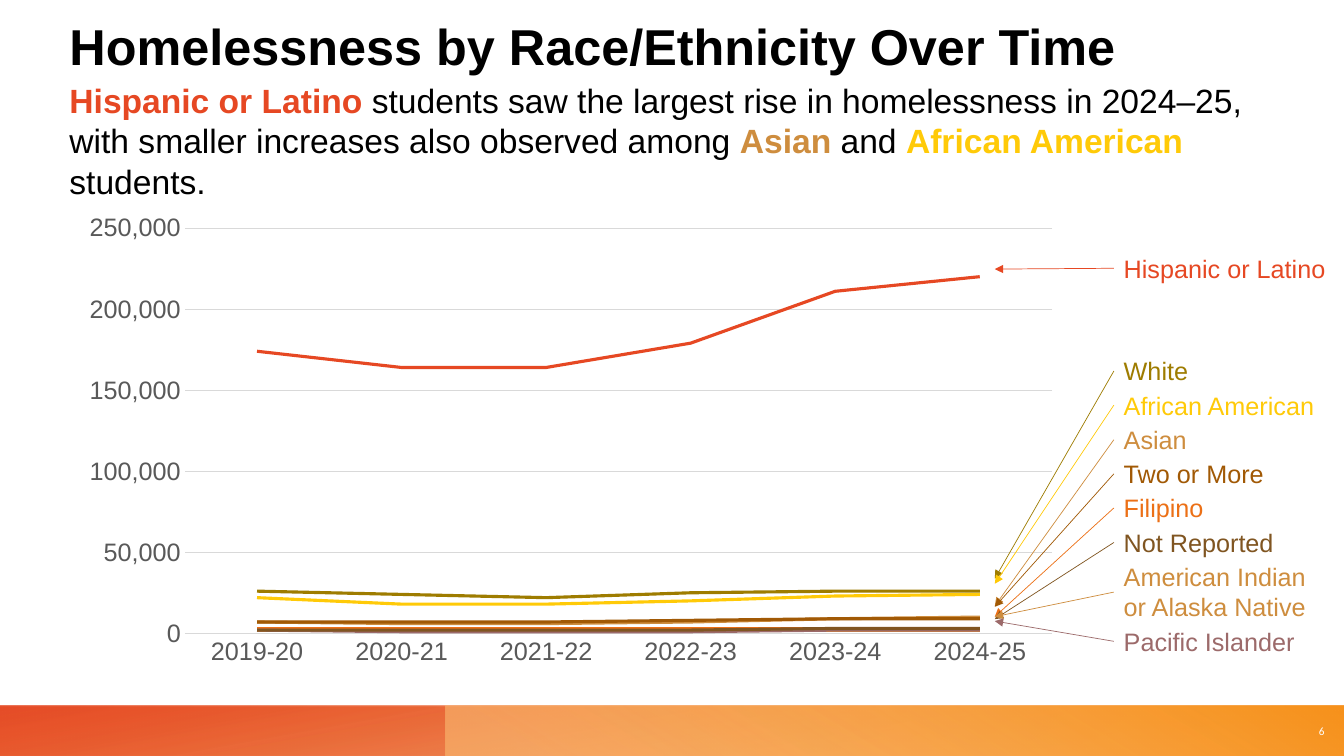
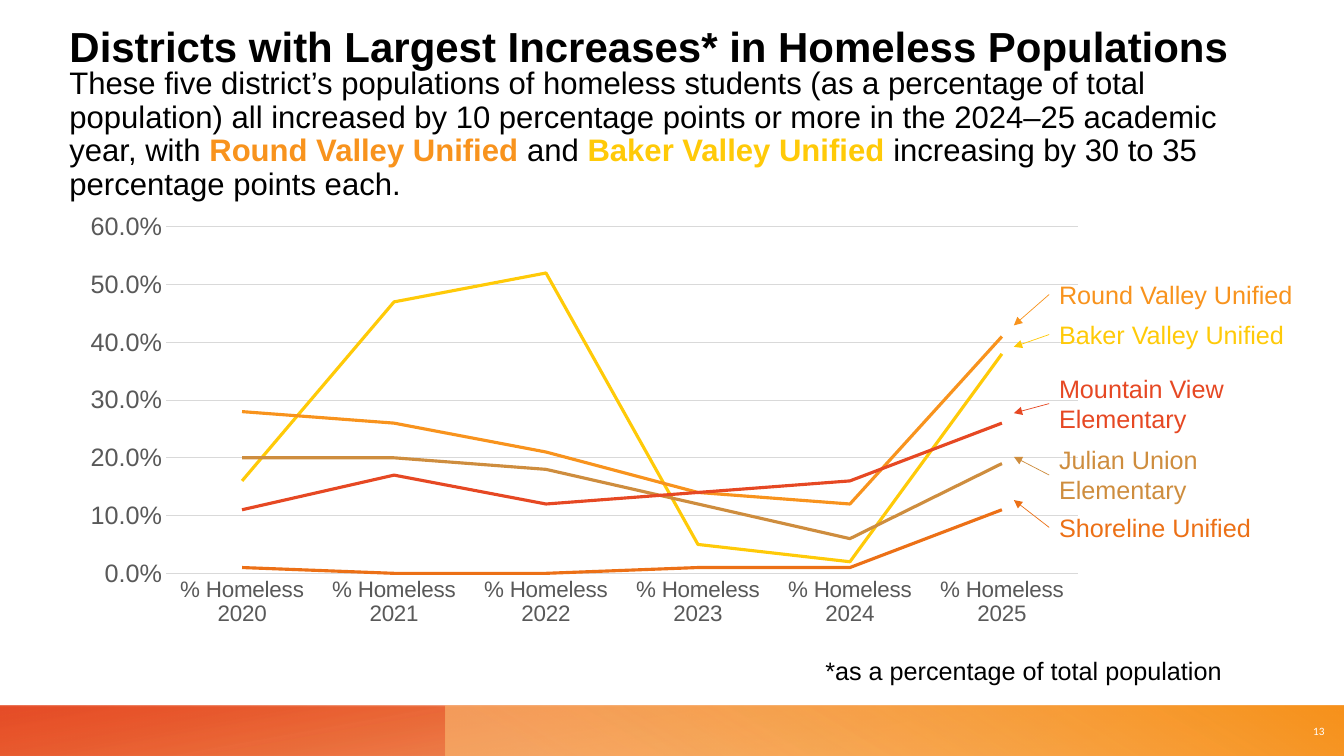
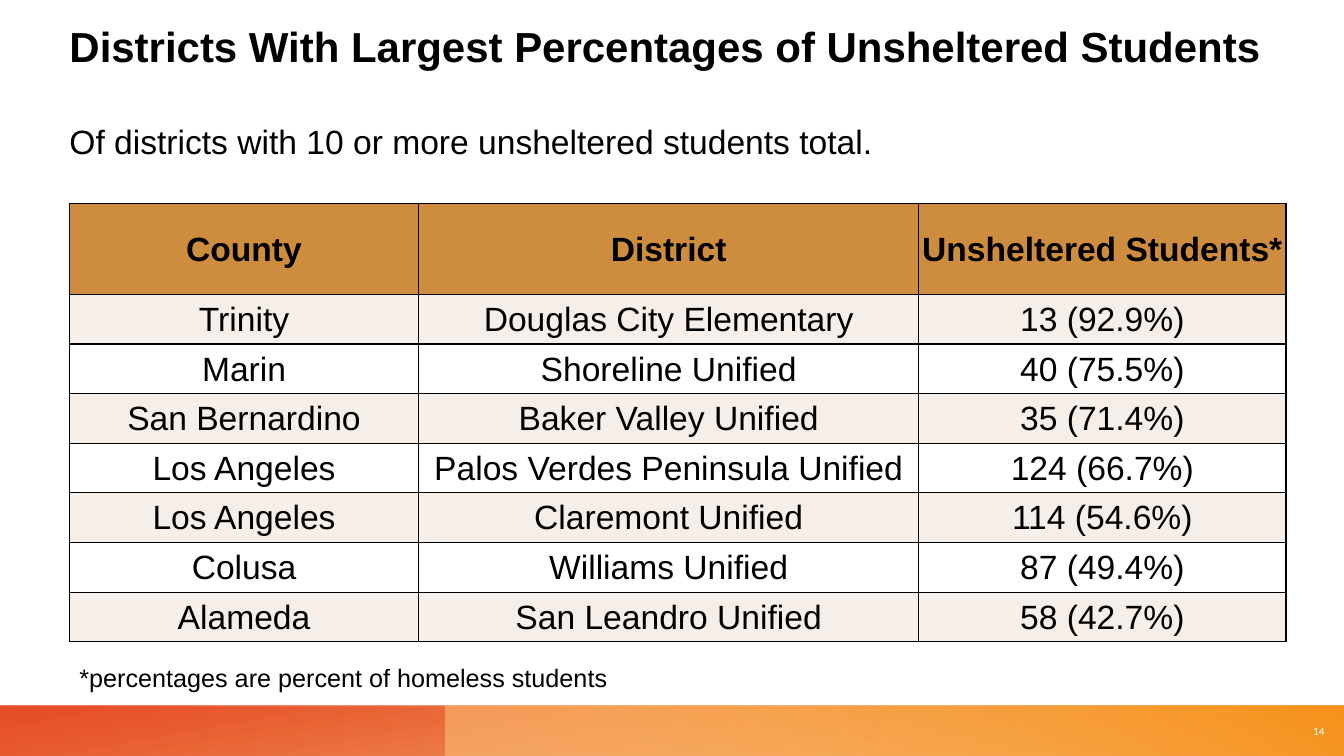
"""Build three slides on student homelessness: two line charts and a table."""
from lxml import etree
from pptx import Presentation
from pptx.chart.data import CategoryChartData
from pptx.dml.color import RGBColor
from pptx.enum.chart import XL_CHART_TYPE, XL_TICK_MARK
from pptx.enum.shapes import MSO_CONNECTOR, MSO_SHAPE
from pptx.enum.text import MSO_ANCHOR, MSO_AUTO_SIZE, PP_ALIGN
from pptx.oxml.ns import qn
from pptx.util import Cm, Pt

LINE_CHART = XL_CHART_TYPE.LINE
NO_TICK = XL_TICK_MARK.NONE
STRAIGHT = MSO_CONNECTOR.STRAIGHT
RECTANGLE = MSO_SHAPE.RECTANGLE
MIDDLE, TOP = MSO_ANCHOR.MIDDLE, MSO_ANCHOR.TOP
NO_AUTOFIT = MSO_AUTO_SIZE.NONE
LEFT, CENTER, RIGHT = PP_ALIGN.LEFT, PP_ALIGN.CENTER, PP_ALIGN.RIGHT


class Theme:
    font, number_font = "Arial", "Calibri"
    black = RGBColor.from_string("000000")
    white = RGBColor.from_string("FFFFFF")
    red = RGBColor.from_string("E64823")
    orange = RGBColor.from_string("F8931D")
    dark_orange = RGBColor.from_string("EC7016")
    pale_orange = RGBColor.from_string("FBBE77")
    yellow = RGBColor.from_string("FFCA08")
    tan = RGBColor.from_string("CE8D3E")
    mauve = RGBColor.from_string("9C6A6A")
    olive = RGBColor.from_string("9E7C00")
    brown = RGBColor.from_string("A15905")
    dark_brown = RGBColor.from_string("805521")
    cream = RGBColor.from_string("F6EEE8")
    axis_text = RGBColor.from_string("595959")
    grid = RGBColor.from_string("D9D9D9")
    body_size, label_size, number_size = Pt(24), Pt(18), Pt(8)
    margin, content_width, content_top = 1.75, 30.66, 5.13


def write_text(frame, pieces, size, bold=False, font=Theme.font, align=LEFT):
    paragraph = frame.paragraphs[0]
    paragraph.alignment = align
    for text, colour in pieces:
        run = paragraph.add_run()
        run.text = text
        run.font.name = font
        run.font.size = size
        run.font.bold = bold or (len(pieces) > 1 and colour != Theme.black)
        run.font.color.rgb = colour
    return paragraph


def add_text_box(slide, box, text, colour, size=Theme.label_size,
                 font=Theme.font, align=LEFT, anchor=TOP):
    frame = slide.shapes.add_textbox(*map(Cm, box)).text_frame
    frame.word_wrap = True
    frame.vertical_anchor = anchor
    write_text(frame, [(text, colour)], size, font=font, align=align)


headings = [
    {"number": "6", "title": "Homelessness by Race/Ethnicity Over Time", "title_size": 36,
     "body_top": 1.85, "body_height": 3.38, "body_size": Theme.body_size, "spacing": 1.0,
     "body": [
         ("Hispanic or Latino ", Theme.red),
         ("students saw the largest rise in homelessness in 2024–25, with smaller "
          "increases also observed among ", Theme.black),
         ("Asian", Theme.tan), (" and ", Theme.black),
         ("African American ", Theme.yellow), ("students.", Theme.black)]},
    {"number": "13", "title": "Districts with Largest Increases* in Homeless Populations",
     "title_size": 30, "body_top": 1.63, "body_height": 3.53, "body_size": Pt(22.2),
     "spacing": 0.9,
     "body": [
         ("These five district’s populations of homeless students (as a percentage of "
          "total population) all increased by 10 percentage points or more in the "
          "2024–25 academic year, with ", Theme.black),
         ("Round Valley Unified ", Theme.orange), ("and ", Theme.black),
         ("Baker Valley Unified ", Theme.yellow),
         ("increasing by 30 to 35 percentage points each.", Theme.black)]},
    {"number": "14", "title": "Districts With Largest Percentages of Unsheltered Students",
     "title_size": 30, "body_top": 2.41, "body_height": 2.29, "body_size": Theme.body_size,
     "spacing": 1.0,
     "body": [("Of districts with 10 or more unsheltered students total.", Theme.black)]},
]

presentation = Presentation()
presentation.slide_width, presentation.slide_height = Cm(33.87), Cm(19.05)
layout = presentation.slide_layouts[1]
for placeholder in list(layout.placeholders):
    if placeholder.placeholder_format.idx >= 10:
        placeholder.element.getparent().remove(placeholder.element)

slides = []
for heading in headings:
    slide = presentation.slides.add_slide(layout)
    slides.append(slide)
    title, body = slide.shapes.title, slide.placeholders[1]
    for shape, top, height in ((title, 0.25, 1.78),
                               (body, heading["body_top"], heading["body_height"])):
        shape.left, shape.top = Cm(Theme.margin), Cm(top)
        shape.width, shape.height = Cm(Theme.content_width), Cm(height)
        frame = shape.text_frame
        frame.auto_size = NO_AUTOFIT
        frame.vertical_anchor = MIDDLE
        frame.margin_left = frame.margin_right = frame.margin_top = frame.margin_bottom = 0
    write_text(title.text_frame, [(heading["title"], Theme.black)],
               Pt(heading["title_size"]), bold=True)
    paragraph = write_text(body.text_frame, heading["body"], heading["body_size"])
    paragraph.line_spacing = heading["spacing"]
    paragraph.space_before = Pt(6)
    properties = paragraph._p.get_or_add_pPr()
    properties.set("marL", "0")
    properties.set("indent", "0")
    etree.SubElement(properties, qn("a:buNone"))

bands = []
for top in (17.78, 17.81):
    for left, width, rotation, angle, stops in (
            (0, 33.87, 180, 260, ((0.14, Theme.dark_orange, 28), (1, Theme.red, 85))),
            (11.22, 22.65, 0, 120, ((0.09, Theme.pale_orange, 55), (0.99, Theme.orange, 100)))):
        band = slides[0].shapes.add_shape(RECTANGLE, Cm(left), Cm(top), Cm(width), Cm(1.27))
        band.shadow.inherit = False
        band.line.fill.background()
        band.rotation = rotation
        band.element.spPr.find(qn("a:xfrm")).set("flipH", "1")
        band.fill.gradient()
        band.fill.gradient_angle = angle
        for stop, (position, colour, opacity) in zip(band.fill.gradient_stops, stops):
            stop.position = position
            stop.color.rgb = colour
        for colour_element, (_, _, opacity) in zip(band.element.spPr.iter(qn("a:srgbClr")), stops):
            etree.SubElement(colour_element, qn("a:alpha"), val=str(opacity * 1000))
        bands.append(band)
for band in bands:
    layout.shapes._spTree.append(band.element)

for slide, heading in zip(slides, headings):
    add_text_box(slide, (32.41, 17.81, 1.22, 1.24), heading["number"], Theme.white,
                 Theme.number_size, Theme.number_font, RIGHT, MIDDLE)

charts = [
    {"size": (25.27, 11.89), "plot": (0.115, 0.052, 0.865, 0.859),
     "maximum": 250000, "step": 50000, "format": "#,##0", "category_size": 18,
     "categories": ["2019-20", "2020-21", "2021-22", "2022-23", "2023-24", "2024-25"],
     "series": [
         ("African American", Theme.yellow, (22000, 18000, 18000, 20000, 23000, 24000)),
         ("American Indian or Alaska Native", Theme.orange, (2000,) * 6),
         ("Asian", Theme.tan, (7000, 6000, 6000, 7000, 9000, 10000)),
         ("Filipino", Theme.dark_orange, (3000,) * 6),
         ("Hispanic or Latino", Theme.red, (174000, 164000, 164000, 179000, 211000, 220000)),
         ("Pacific Islander", Theme.mauve, (2000, 1000, 1000, 1000, 2000, 2000)),
         ("White", Theme.olive, (26000, 24000, 22000, 25000, 26000, 26000)),
         ("Two or More", Theme.brown, (7000, 7000, 7000, 8000, 9000, 9000)),
         ("Not Reported", Theme.dark_brown, (2000, 2000, 2000, 2000, 3000, 3000))],
     "label_left": 28.07, "arrow_tip": 25.07,
     "labels": [
         ("Hispanic or Latino", Theme.red, 6.25, 5.79, 1, 6.78),
         ("White", Theme.olive, 8.84, 5.31, 1, 14.58),
         ("African American", Theme.yellow, 9.7, 5.31, 1, 14.71),
         ("Asian", Theme.tan, 10.57, 5.31, 1, 15.27),
         ("Two or More", Theme.brown, 11.43, 5.31, 1, 15.29),
         ("Filipino", Theme.dark_orange, 12.29, 5.31, 1, 15.54),
         ("Not Reported", Theme.dark_brown, 13.16, 5.31, 1, 15.6),
         ("American Indian or Alaska Native", Theme.tan, 14.02, 5.31, 2, 15.54),
         ("Pacific Islander", Theme.mauve, 15.65, 5.31, 1, 15.65)]},
    {"size": (25.91, 10.85), "plot": (0.094, 0.054, 0.887, 0.805),
     "maximum": 60, "step": 10, "format": "0.0\\%", "category_size": 16,
     "categories": [f"% Homeless {year}" for year in range(2020, 2026)],
     "series": [
         ("Baker Valley Unified", Theme.yellow, (16, 47, 52, 5, 2, 38)),
         ("Round Valley Unified", Theme.orange, (28, 26, 21, 14, 12, 41)),
         ("Julian Union Elementary", Theme.tan, (20, 20, 18, 12, 6, 19)),
         ("Shoreline Unified", Theme.dark_orange, (1, 0, 0, 1, 1, 11)),
         ("Mountain View Elementary", Theme.red, (11, 17, 12, 14, 16, 26))],
     "label_left": 26.44, "arrow_tip": 25.55,
     "labels": [
         ("Round Valley Unified", Theme.orange, 6.91, 7.2, 1, 8.2),
         ("Baker Valley Unified", Theme.yellow, 7.92, 7.2, 1, 8.74),
         ("Mountain View Elementary", Theme.red, 9.27, 7.2, 2, 10.41),
         ("Julian Union Elementary", Theme.tan, 11.07, 7.2, 2, 11.51),
         ("Shoreline Unified", Theme.dark_orange, 12.78, 7.2, 1, 12.6)]},
]

for slide, content in zip(slides, charts):
    chart_data = CategoryChartData()
    chart_data.categories = content["categories"]
    for name, _, values in content["series"]:
        chart_data.add_series(name, values)
    width, height = content["size"]
    chart = slide.shapes.add_chart(LINE_CHART, Cm(Theme.margin), Cm(Theme.content_top),
                                   Cm(width), Cm(height), chart_data).chart
    chart.has_legend = chart.has_title = False
    chart.font.name = Theme.font
    chart.font.size = Theme.label_size
    chart.plots[0].vary_by_categories = False
    for series, (_, colour, _) in zip(chart.plots[0].series, content["series"]):
        series.smooth = False
        series.format.line.color.rgb = colour
        series.format.line.width = Pt(2.25)

    category_axis, value_axis = chart.category_axis, chart.value_axis
    for axis, size in ((category_axis, Pt(content["category_size"])),
                       (value_axis, Theme.label_size)):
        axis.major_tick_mark = axis.minor_tick_mark = NO_TICK
        axis.tick_labels.font.name = Theme.font
        axis.tick_labels.font.size = size
        axis.tick_labels.font.color.rgb = Theme.axis_text
    value_axis.minimum_scale = 0
    value_axis.maximum_scale = content["maximum"]
    value_axis.major_unit = content["step"]
    value_axis.tick_labels.number_format = content["format"]
    value_axis.tick_labels.number_format_is_linked = False
    value_axis.format.line.fill.background()
    for line in (category_axis.format.line, value_axis.major_gridlines.format.line):
        line.color.rgb = Theme.grid
        line.width = Pt(0.75)

    plot_area = chart._chartSpace.chart.plotArea
    for old_layout in plot_area.findall(qn("c:layout")):
        plot_area.remove(old_layout)
    plot_layout = etree.Element(qn("c:layout"))
    plot_area.insert(0, plot_layout)
    manual = etree.SubElement(plot_layout, qn("c:manualLayout"))
    settings = (("layoutTarget", "inner"), ("xMode", "edge"), ("yMode", "edge"),
                *zip("xywh", content["plot"]))
    for tag, value in settings:
        etree.SubElement(manual, qn(f"c:{tag}"), val=str(value))

    left = content["label_left"]
    for text, colour, top, width, lines, tip in content["labels"]:
        height = 1.02 if lines == 1 else 1.8
        add_text_box(slide, (left, top, width, height), text, colour)
        arrow = slide.shapes.add_connector(STRAIGHT, Cm(left), Cm(top + height / 2),
                                           Cm(content["arrow_tip"]), Cm(tip))
        arrow.line.color.rgb = colour
        arrow.line.width = Pt(0.5)
        etree.SubElement(arrow.line._get_or_add_ln(), qn("a:tailEnd"), type="triangle")
        etree.SubElement(arrow.element.spPr, qn("a:effectLst"))

add_text_box(slides[1], (20.55, 16.38, 12.52, 1.02),
             "*as a percentage of total population", Theme.black)

rows = [
    ("County", "District", "Unsheltered Students*"),
    ("Trinity", "Douglas City Elementary", "13 (92.9%)"),
    ("Marin", "Shoreline Unified", "40 (75.5%)"),
    ("San Bernardino", "Baker Valley Unified", "35 (71.4%)"),
    ("Los Angeles", "Palos Verdes Peninsula Unified", "124 (66.7%)"),
    ("Los Angeles", "Claremont Unified", "114 (54.6%)"),
    ("Colusa", "Williams Unified", "87 (49.4%)"),
    ("Alameda", "San Leandro Unified", "58 (42.7%)"),
]
table = slides[2].shapes.add_table(len(rows), 3, Cm(Theme.margin), Cm(Theme.content_top),
                                   Cm(Theme.content_width), Cm(11)).table
table.horz_banding = False
for column, width in zip(table.columns, (8.8, 12.6, 9.26)):
    column.width = Cm(width)
for row_index, texts in enumerate(rows):
    is_header = row_index == 0
    table.rows[row_index].height = Cm(2.29 if is_header else 1.25)
    fill_colour = Theme.tan if is_header else Theme.cream if row_index % 2 else Theme.white
    for column_index, text in enumerate(texts):
        cell = table.cell(row_index, column_index)
        cell.margin_left = cell.margin_right = cell.margin_top = Cm(0.03)
        cell.margin_bottom = 0
        cell.vertical_anchor = MIDDLE
        write_text(cell.text_frame, [(text, Theme.black)], Theme.body_size,
                   bold=is_header, align=CENTER)
        cell_properties = cell._tc.get_or_add_tcPr()
        for side in ("lnL", "lnR", "lnT", "lnB"):
            border = etree.SubElement(cell_properties, qn(f"a:{side}"), w=str(Pt(1)))
            border_fill = etree.SubElement(border, qn("a:solidFill"))
            etree.SubElement(border_fill, qn("a:srgbClr"), val=str(Theme.black))
        cell.fill.solid()
        cell.fill.fore_color.rgb = fill_colour

add_text_box(slides[2], (Theme.margin, 16.56, 16.97, 1.04),
             "*percentages are percent of homeless students", Theme.black)

presentation.save("out.pptx")
